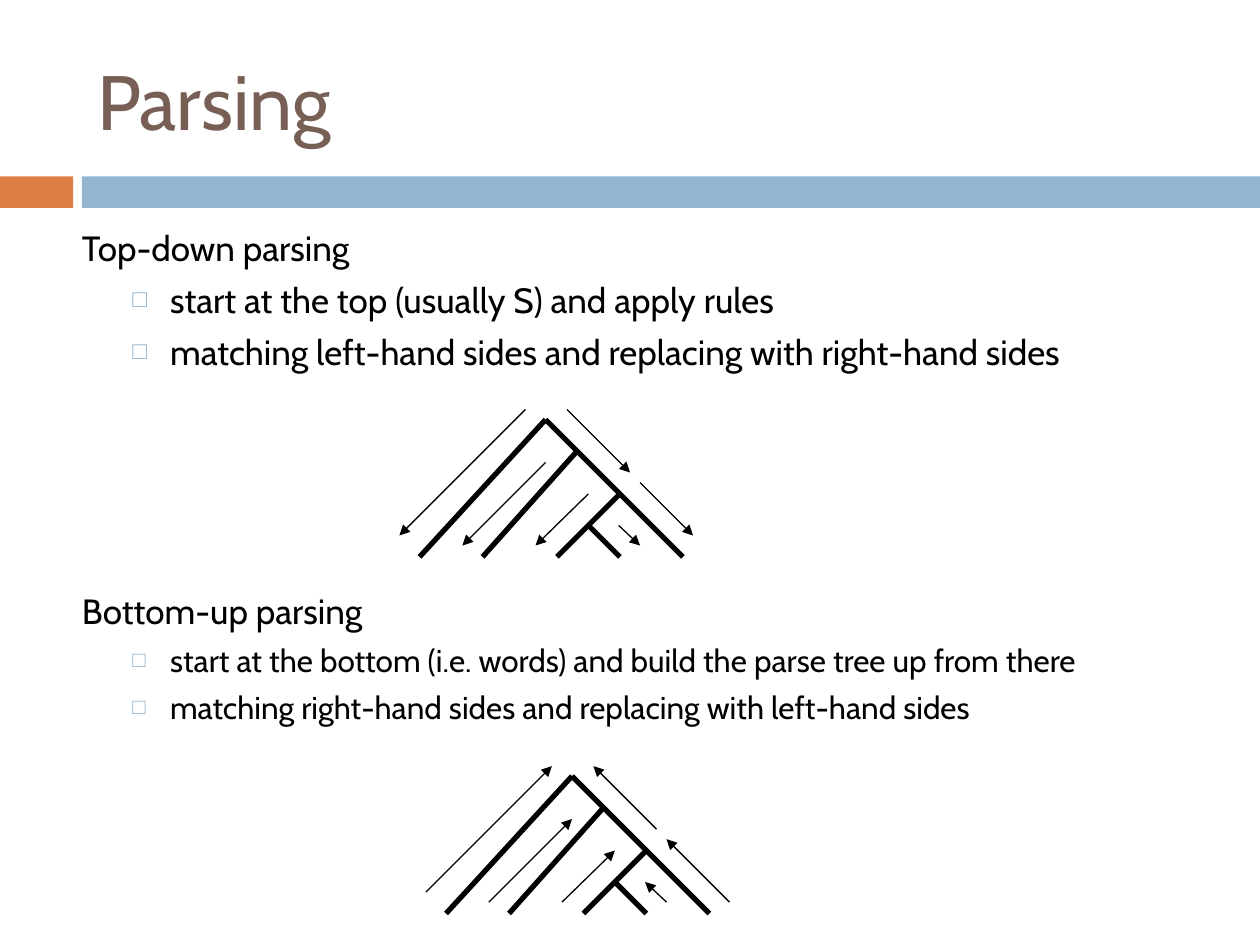
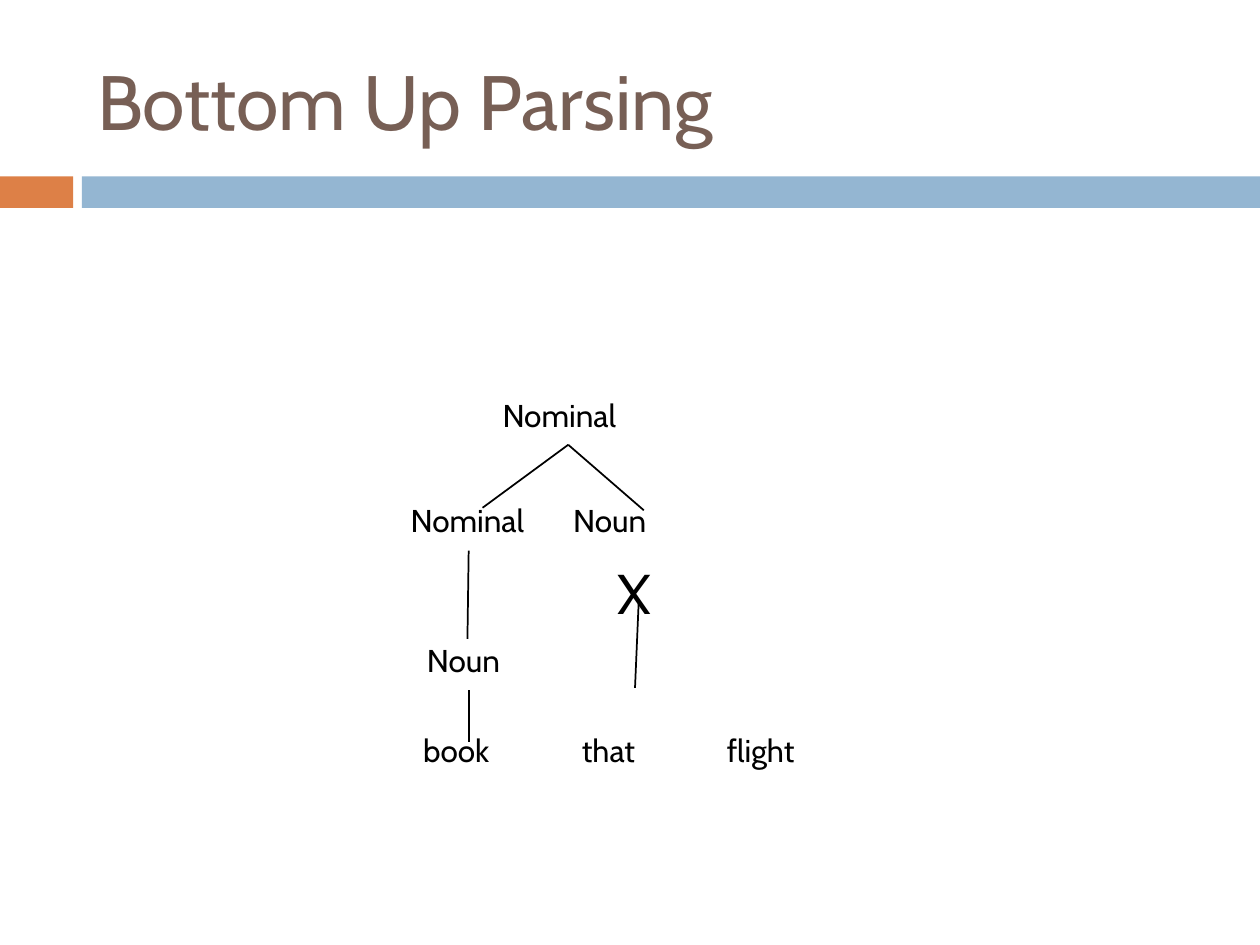
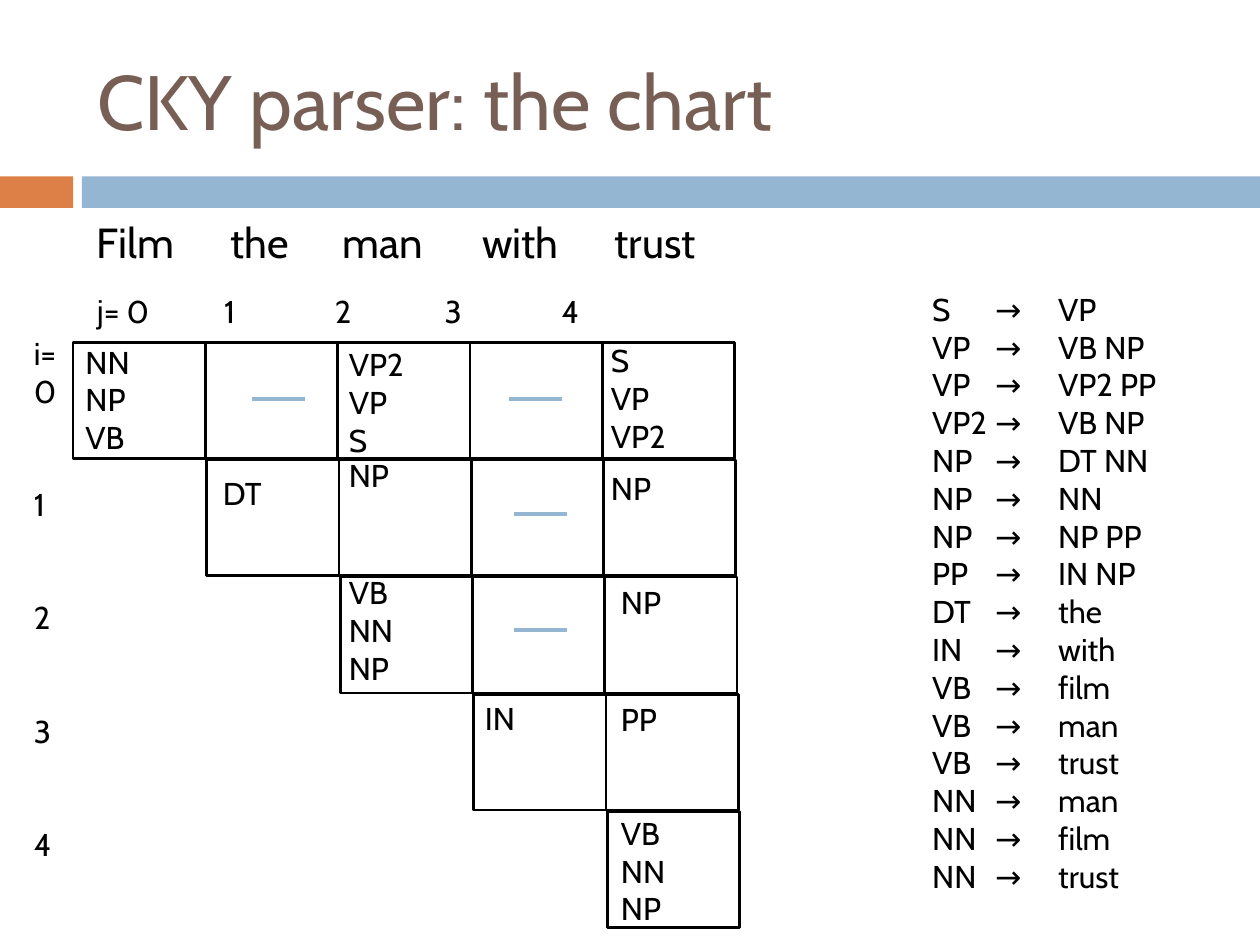
from dataclasses import dataclass

from lxml.etree import SubElement
from pptx import Presentation
from pptx.dml.color import RGBColor
from pptx.enum.shapes import MSO_CONNECTOR, MSO_SHAPE
from pptx.enum.text import MSO_ANCHOR, MSO_AUTO_SIZE, PP_ALIGN
from pptx.oxml.ns import qn
from pptx.util import Pt

EMU_PER_PX = 9144  # 100 px to the inch
TITLE_AND_BODY, TITLE_ONLY = 1, 5
BOTTOM_SIDE = 2


@dataclass(frozen=True)
class Theme:
    ink: str = "000000"
    paper: str = "FFFFFF"
    title: str = "775F55"
    accent: str = "DD8047"
    band: str = "94B6D2"
    font: str = "Cabin"
    index_font: str = "Arial"
    title_size: int = 44
    mark_size: int = 32
    sentence_size: int = 24
    heading_size: int = 20
    text_size: int = 18


THEME = Theme()


def px(length):
    return round(length * EMU_PER_PX)


def color(value):
    return RGBColor.from_string(value)


def write(paragraph, content, size=THEME.text_size, ink=THEME.ink, before=0, tabs=()):
    """Fill a paragraph from a string or from (text, font) pairs; tabs are in px."""
    paragraph.alignment = PP_ALIGN.LEFT
    paragraph.space_before = Pt(before)
    runs = [(content, THEME.font)] if isinstance(content, str) else content
    for text, font in runs:
        run = paragraph.add_run()
        run.text = text
        run.font.name, run.font.size = font, Pt(size)
        run.font.color.rgb = color(ink)
    if tabs:
        tab_list = SubElement(paragraph._p.get_or_add_pPr(), qn("a:tabLst"))
        for position in tabs:
            SubElement(tab_list, qn("a:tab"), pos=str(px(position)), algn="l")


def set_bullet(paragraph, bulleted):
    properties = paragraph._p.get_or_add_pPr()
    properties.set("marL", str(px(70 if bulleted else 0)))
    properties.set("indent", str(px(-30 if bulleted else 0)))
    if bulleted:
        bullet_color = SubElement(properties, qn("a:buClr"))
        SubElement(bullet_color, qn("a:srgbClr"), val=THEME.band)
        SubElement(properties, qn("a:buSzPct"), val="70000")
        SubElement(properties, qn("a:buChar"), char="□")
    else:
        SubElement(properties, qn("a:buNone"))


class Deck:
    def __init__(self):
        self.presentation = Presentation()
        self.presentation.slide_width = px(1000)
        self.presentation.slide_height = px(750)
        self.slide = None

    def start_slide(self, title, layout=TITLE_ONLY):
        self.slide = self.presentation.slides.add_slide(
            self.presentation.slide_layouts[layout])
        self.rectangle(0, 140, 58, 25, THEME.accent)
        self.rectangle(65, 140, 935, 25, THEME.band)
        frame = self.place(self.slide.shapes.title, 67, 25, 892, 108)
        frame.vertical_anchor = MSO_ANCHOR.MIDDLE
        write(frame.paragraphs[0], title, size=THEME.title_size, ink=THEME.title)

    def place(self, shape, left, top, width, height):
        shape.left, shape.top = px(left), px(top)
        shape.width, shape.height = px(width), px(height)
        frame = shape.text_frame
        frame.word_wrap = True
        frame.auto_size = MSO_AUTO_SIZE.NONE
        return frame

    def rectangle(self, left, top, width, height, fill, outline=None):
        shape = self.slide.shapes.add_shape(
            MSO_SHAPE.RECTANGLE, px(left), px(top), px(width), px(height))
        shape.shadow.inherit = False
        shape.fill.solid()
        shape.fill.fore_color.rgb = color(fill)
        if outline:
            shape.line.color.rgb = color(outline)
            shape.line.width = Pt(1.5)
        else:
            shape.line.fill.background()

    def body(self, left, top, width, height, items):
        """Write (text, bulleted, size, space before) items into the body."""
        frame = self.place(self.slide.placeholders[1], left, top, width, height)
        for number, (text, bulleted, size, before) in enumerate(items):
            paragraph = frame.add_paragraph() if number else frame.paragraphs[0]
            paragraph.level = int(bulleted)
            write(paragraph, text, size=size, before=before)
            set_bullet(paragraph, bulleted)

    def text(self, left, top, width, height, *lines, **style):
        shape = self.slide.shapes.add_textbox(0, 0, 0, 0)
        frame = self.place(shape, left, top, width, height)
        for number, line in enumerate(lines):
            paragraph = frame.add_paragraph() if number else frame.paragraphs[0]
            write(paragraph, line, **style)
        return shape

    def line(self, start, end, width=1, ink=THEME.ink, arrow=False, below=None):
        """Draw a line; below is the box whose bottom side it hangs from."""
        connector = self.slide.shapes.add_connector(
            MSO_CONNECTOR.STRAIGHT, *map(px, (*start, *end)))
        if below is not None:
            connector.begin_connect(below, BOTTOM_SIDE)
        connector.line.color.rgb = color(ink)
        connector.line.width = Pt(width)
        if arrow:
            SubElement(connector.line._get_or_add_ln(), qn("a:tailEnd"), type="triangle")
        SubElement(connector._element.spPr, qn("a:effectLst"))


def parse_tree(deck, apex, upward, last_reach):
    """Draw a branching tree with arrows that run up or down its branches."""
    def at(point):
        return apex[0] + point[0], apex[1] + point[1]

    branches = [((0, 0), (-100, 109)), ((0, 0), (109, 109)), ((59, 59), (9, 109)),
                ((34, 84), (59, 109)), ((25, 25), (-50, 109))]
    arrows = [((-16, -8), (-116, 92)), ((0, 34), (-66, 100)), ((34, 59), (-8, 100)),
              ((58, 84), (75, 100)), ((17, -8), (67, 42)),
              ((75, 50), (25 + last_reach, last_reach))]
    for upper, lower in branches:
        deck.line(at(upper), at(lower), width=3)
    for upper, lower in arrows:
        start, end = (lower, upper) if upward else (upper, lower)
        deck.line(at(start), at(end), width=0.75, arrow=True)


def parsing_slide(deck):
    deck.start_slide("Parsing", TITLE_AND_BODY)
    large, small = THEME.heading_size, THEME.text_size
    deck.body(55, 175, 826, 542, [
        ("Top-down parsing", False, large, 7),
        ("start at the top (usually S) and apply rules", True, large, 5.5),
        ("matching left-hand sides and replacing with right-hand sides", True, large, 5.5),
        ("Bottom-up parsing", False, large, 124),
        ("start at the bottom (i.e. words) and build the parse tree up from there",
         True, small, 5.5),
        ("matching right-hand sides and replacing with left-hand sides", True, small, 5.5),
    ])
    parse_tree(deck, (454, 616), upward=True, last_reach=100)
    parse_tree(deck, (433, 333), upward=False, last_reach=92)


def bottom_up_slide(deck):
    deck.start_slide("Bottom Up Parsing")
    for left, word in ((326, "book"), (452, "that"), (567, "flight")):
        deck.text(left, 575, 100, 44, word)
    root = deck.text(389, 309, 124, 44, "Nominal")
    nominal = deck.text(316, 393, 112, 44, "Nominal")
    deck.text(445, 393, 86, 44, "Noun")
    noun = deck.text(329, 504, 86, 44, "Noun")
    deck.text(480, 438, 53, 135, "X", size=THEME.mark_size)
    deck.line((451, 353), (383, 403), below=root)
    deck.line((451, 353), (511, 405), below=root)
    deck.line((372, 437), (371, 507), below=nominal)
    deck.line((372, 548), (372, 589), below=noun)
    deck.line((507, 476), (504, 546))


def chart_slide(deck):
    deck.start_slide("CKY parser: the chart")
    words = ["Film", "the", "man", "with", "trust"]
    for row in range(len(words)):
        for column in range(row, len(words)):
            deck.rectangle(58 + 105 * column + row, 272 + 93 * row, 105, 92,
                           THEME.paper, THEME.ink)

    deck.text(67, 167, 566, 50, "\t".join(words), size=THEME.sentence_size,
              tabs=(106, 195, 306, 411))
    deck.text(67, 227, 483, 40,
              [("j", THEME.index_font), ("= 0\t1\t2\t3\t4", THEME.font)],
              tabs=(101, 189, 276, 369))
    deck.text(17, 260, 44, 70, "i=", "0")
    for row in range(1, len(words)):
        deck.text(17, 290 + 90 * row, 44, 40, str(row))

    cell_entries = [
        (58, 267, "NN NP VB"), (267, 269, "VP2 VP S"), (475, 266, "S VP VP2"),
        (167, 371, "DT"), (267, 357, "NP"), (475, 367, "NP"),
        (267, 450, "VB NN NP"), (483, 458, "NP"),
        (375, 550, "IN"), (483, 551, "PP"), (483, 641, "VB NN NP"),
    ]
    for left, top, symbols in cell_entries:
        lines = symbols.split()
        deck.text(left, top, 100, 10 + 30 * len(lines), *lines)
    for left, top in ((200, 317), (404, 317), (408, 408), (408, 500)):
        deck.line((left, top), (left + 42, top), width=2.25, ink=THEME.band)

    grammar = [
        ("S", "VP"), ("VP", "VB NP"), ("VP", "VP2 PP"), ("VP2", "VB NP"),
        ("NP", "DT NN"), ("NP", "NN"), ("NP", "NP PP"), ("PP", "IN NP"),
        ("DT", "the"), ("IN", "with"), ("VB", "film"), ("VB", "man"),
        ("VB", "trust"), ("NN", "man"), ("NN", "film"), ("NN", "trust"),
    ]
    deck.text(730, 225, 229, 505, *(f"{left}\t→\t{right}" for left, right in grammar),
              tabs=(50, 100))


def main():
    deck = Deck()
    parsing_slide(deck)
    bottom_up_slide(deck)
    chart_slide(deck)
    deck.presentation.save("out.pptx")


if __name__ == "__main__":
    main()
